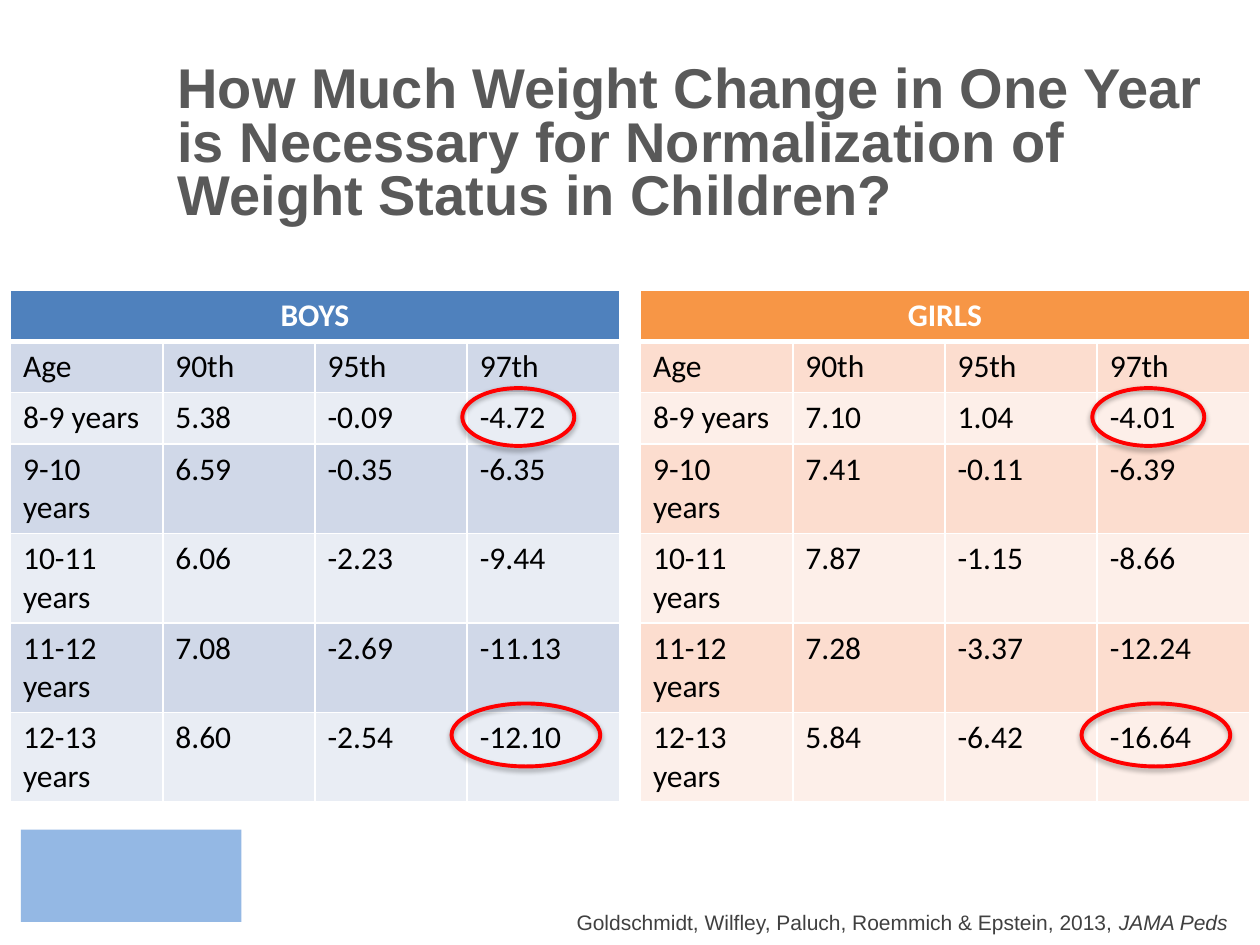
import pptx
import pptx.util
import pptx.dml.color
import pptx.enum.shapes
import pptx.enum.text
import pptx.oxml
import pptx.oxml.ns
from pptx.util import Pt

# Content
TITLE = ("How Much Weight Change in One Year is Necessary for "
         "Normalization of Weight Status in Children?")
CITATION = [("Goldschmidt, Wilfley, Paluch, Roemmich & Epstein, 2013, ", False),
            ("JAMA Peds", True)]
COLUMNS = ["Age", "90th", "95th", "97th"]
AGES = ["8-9 years", "9-10 years", "10-11 years", "11-12 years", "12-13 years"]
GROUPS = [
    {"name": "BOYS", "palette": "boys", "changes": [
        ("5.38", "-0.09", "-4.72"),
        ("6.59", "-0.35", "-6.35"),
        ("6.06", "-2.23", "-9.44"),
        ("7.08", "-2.69", "-11.13"),
        ("8.60", "-2.54", "-12.10")]},
    {"name": "GIRLS", "palette": "girls", "changes": [
        ("7.10", "1.04", "-4.01"),
        ("7.41", "-0.11", "-6.39"),
        ("7.87", "-1.15", "-8.66"),
        ("7.28", "-3.37", "-12.24"),
        ("5.84", "-6.42", "-16.64")]},
]

THEME = {
    "boys": {"header": "4F81BD", "bands": ("D0D8E8", "E9EDF4")},
    "girls": {"header": "F79646", "bands": ("FCDDCF", "FDEFE9")},
    "title": "595959", "citation": "404040", "ring": "FF0000",
    "block": "94B8E4", "white": "FFFFFF", "black": "000000",
    "title_size": 32, "table_size": 18, "citation_size": 12,
    "title_font": "Arial", "table_font": "Calibri",
}

# Layout in points
TABLE_LEFT, TABLE_TOP, TABLE_STEP = 6, 166, 360
COLUMN_WIDTH, ROW_HEIGHT = 87, 29.2
# Rings: offset from table left, top, width, height
RINGS = [(258.2, 221.8, 64, 33), (252, 402, 85, 36)]


def rgb(value):
    return pptx.dml.color.RGBColor.from_string(value)


def write_text(frame, spans, *, size, font, color, bold=False,
               align="LEFT", line_spacing=None):
    """Write (text, italic) spans, or one string, as a single paragraph."""
    frame.word_wrap = True
    para = frame.paragraphs[0]
    para.alignment = getattr(pptx.enum.text.PP_ALIGN, align)
    if line_spacing:
        para.line_spacing = line_spacing
    if isinstance(spans, str):
        spans = [(spans, False)]
    for text, italic in spans:
        span = para.add_run()
        span.text = text
        span.font.size = Pt(size)
        span.font.name = font
        span.font.color.rgb = rgb(color)
        span.font.bold = bold
        span.font.italic = italic


def set_borders(cell, top=1, bottom=1):
    properties = cell._tc.get_or_add_tcPr()
    widths = {"lnL": 1, "lnR": 1, "lnT": top, "lnB": bottom}
    for position, (side, width) in enumerate(widths.items()):
        line = pptx.oxml.parse_xml(
            f'<a:{side} {pptx.oxml.ns.nsdecls("a")} w="{Pt(width)}"><a:solidFill>'
            f'<a:srgbClr val="{THEME["white"]}"/></a:solidFill></a:{side}>')
        properties.insert(position, line)


def fill_cell(cell, text, fill, color, **text_format):
    cell.fill.solid()
    cell.fill.fore_color.rgb = rgb(fill)
    write_text(cell.text_frame, text, size=THEME["table_size"],
               font=THEME["table_font"], color=color, **text_format)


def add_group_table(page, group, left):
    rows = [COLUMNS] + [[age, *row] for age, row in zip(AGES, group["changes"])]
    row_count, column_count = len(rows) + 1, len(COLUMNS)
    table = page.shapes.add_table(
        row_count, column_count, Pt(left), Pt(TABLE_TOP),
        Pt(COLUMN_WIDTH * column_count), Pt(ROW_HEIGHT * row_count)).table
    palette = THEME[group["palette"]]
    for column in table.columns:
        column.width = Pt(COLUMN_WIDTH)
    for row in table.rows:
        row.height = Pt(ROW_HEIGHT)

    # Header across all columns
    header = table.cell(0, 0)
    header.merge(table.cell(0, column_count - 1))
    fill_cell(header, group["name"], palette["header"], THEME["white"],
              bold=True, align="CENTER")
    for index in range(column_count):
        set_borders(table.cell(0, index), bottom=3)

    # Banded body
    for row_index, row in enumerate(rows):
        for column_index, text in enumerate(row):
            cell = table.cell(row_index + 1, column_index)
            fill_cell(cell, text, palette["bands"][row_index % 2], THEME["black"])
            set_borders(cell, top=1 if row_index else 3)


def add_ring(page, left, top, width, height):
    ring = page.shapes.add_shape(pptx.enum.shapes.MSO_SHAPE.OVAL,
                                 Pt(left), Pt(top), Pt(width), Pt(height))
    ring.fill.background()
    ring.line.color.rgb = rgb(THEME["ring"])
    ring.line.width = Pt(2.25)
    ring._element.spPr.append(pptx.oxml.parse_xml(
        f'<a:effectLst {pptx.oxml.ns.nsdecls("a")}>'
        f'<a:outerShdw blurRad="{Pt(3.1)}" dist="{Pt(1.8)}" dir="5400000" '
        f'rotWithShape="0"><a:srgbClr val="{THEME["black"]}">'
        '<a:alpha val="35000"/></a:srgbClr></a:outerShdw></a:effectLst>'))


def main():
    deck = pptx.Presentation()
    deck.slide_width, deck.slide_height = Pt(720), Pt(540)
    page = deck.slides.add_slide(deck.slide_layouts[6])

    # Tables
    lefts = [TABLE_LEFT + index * TABLE_STEP for index in range(len(GROUPS))]
    for group, left in zip(GROUPS, lefts):
        add_group_table(page, group, left)

    # Citation
    box = page.shapes.add_textbox(Pt(41.8), Pt(516.2), Pt(676.8), Pt(21.8))
    box.text_frame.margin_right = Pt(17)
    write_text(box.text_frame, CITATION, size=THEME["citation_size"],
               font=THEME["title_font"], color=THEME["citation"], align="RIGHT")

    # Rings around the first and last 97th percentile values
    for left in lefts:
        for offset, top, width, height in RINGS:
            add_ring(page, left + offset, top, width, height)

    # Title
    box = page.shapes.add_textbox(Pt(94.3), Pt(33.8), Pt(625.7), Pt(356.4))
    write_text(box.text_frame, TITLE, size=THEME["title_size"],
               font=THEME["title_font"], color=THEME["title"], bold=True,
               line_spacing=0.8)

    # Corner block
    block = page.shapes.add_shape(pptx.enum.shapes.MSO_SHAPE.RECTANGLE,
                                  Pt(12), Pt(474), Pt(126), Pt(52.8))
    block.shadow.inherit = False
    block.fill.solid()
    block.fill.fore_color.rgb = rgb(THEME["block"])
    block.line.fill.background()

    deck.save("out.pptx")


if __name__ == "__main__":
    main()
